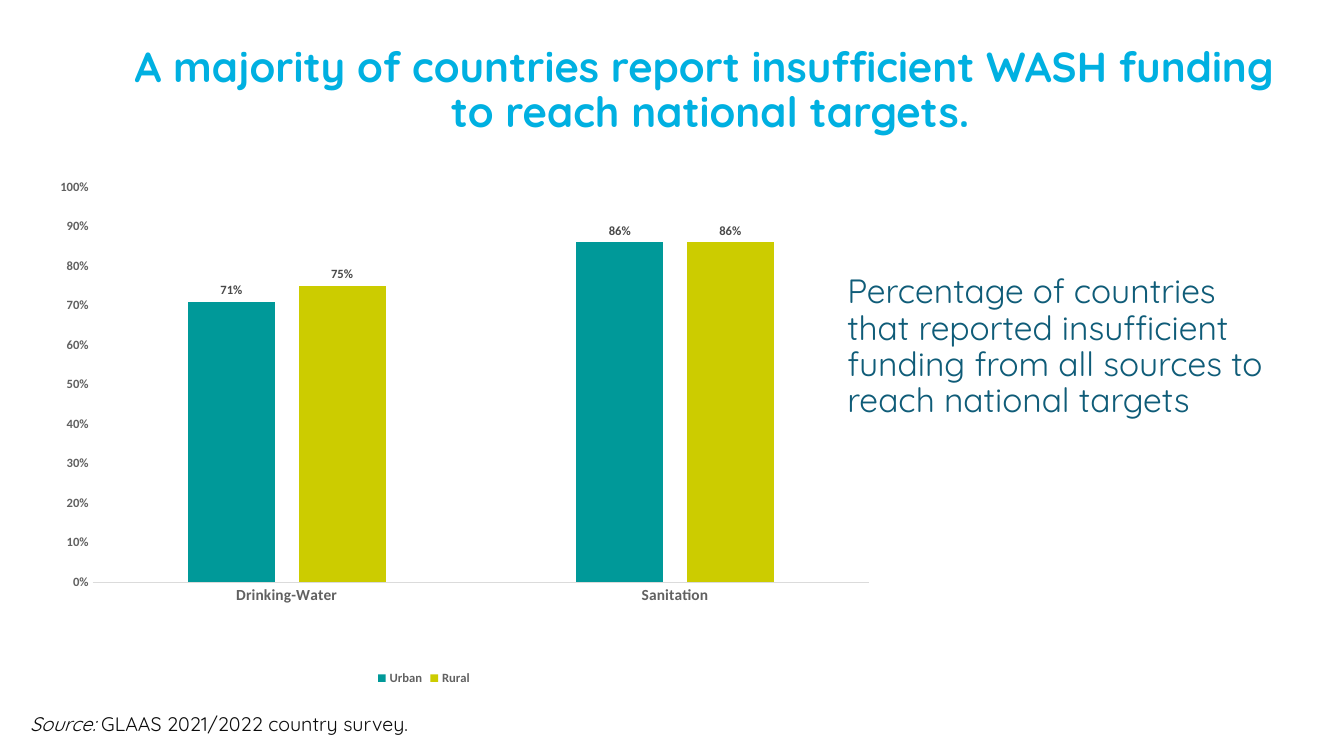
from lxml.etree import SubElement
from pptx import Presentation
from pptx.chart.data import CategoryChartData
from pptx.dml.color import RGBColor
from pptx.enum.chart import XL_CHART_TYPE as ChartType, XL_LEGEND_POSITION as LegendAt
from pptx.enum.chart import XL_LABEL_POSITION as LabelAt, XL_TICK_MARK as Tick
from pptx.enum.text import MSO_ANCHOR as Anchor, PP_ALIGN as Align
from pptx.oxml.ns import qn
from pptx.util import Inches, Pt

COLORS = {
    "title": "00B0E1", "message": "0F5C78", "ink": "0C0C0C",
    "axis": "616161", "baseline": "DBDBDB", "label": "494949",
    "Urban": "009999", "Rural": "CCCC00",
}
SHARES = {"Urban": (0.71, 0.86), "Rural": (0.75, 0.86)}

deck = Presentation()
deck.slide_width, deck.slide_height = Inches(13.33), Inches(7.5)
W, H = deck.slide_width, deck.slide_height
slide = deck.slides.add_slide(deck.slide_layouts[6])


def style(font, size, color, bold=False, italic=False, face="Calibri"):
    font.name, font.size = face, Pt(size)
    font.bold, font.italic = bold, italic
    font.color.rgb = RGBColor.from_string(COLORS[color])


def add_text(runs, x, y, w, h, size, color, bold=False, align=Align.LEFT,
             anchor=Anchor.MIDDLE, spacing=0.9):
    """Place (text, italic) runs in a box given in shares of the slide."""
    box = slide.shapes.add_textbox(int(W * x), int(H * y), int(W * w), int(H * h))
    frame = box.text_frame
    frame.word_wrap, frame.vertical_anchor = True, anchor
    paragraph = frame.paragraphs[0]
    paragraph.alignment, paragraph.line_spacing = align, spacing
    for index, (text, italic) in enumerate(runs):
        for part, line in enumerate(text.split("\n")):
            if part:
                paragraph.add_line_break()
            run = paragraph.add_run()
            run.text = line
            style(run.font, size, color, bold, italic, "Quicksand")


# Funding chart
shares = CategoryChartData(number_format="0%")
shares.categories = ["Drinking-Water", "Sanitation"]
for area, values in SHARES.items():
    shares.add_series(area, values)
chart = slide.shapes.add_chart(
    ChartType.COLUMN_CLUSTERED, Inches(-0.93), Inches(1.24),
    Inches(10.27), Inches(5.6), shares).chart
chart.has_title = False
style(chart.font, 10, "ink")

# Bars and their values
bars = chart.plots[0]
bars.gap_width, bars.overlap, bars.vary_by_categories = 219, -27, False
for series in bars.series:
    series.format.fill.solid()
    series.format.fill.fore_color.rgb = RGBColor.from_string(COLORS[series.name])
    labels = series.data_labels
    labels.show_value, labels.position = True, LabelAt.OUTSIDE_END
    labels.number_format, labels.number_format_is_linked = "0%", False
    style(labels.font, 9, "label", bold=True)

# Axes
for axis, size in ((chart.category_axis, 11), (chart.value_axis, 9)):
    axis.has_major_gridlines = False
    axis.major_tick_mark = axis.minor_tick_mark = Tick.NONE
    style(axis.tick_labels.font, size, "axis", bold=True)
baseline = chart.category_axis.format.line
baseline.width = Pt(0.75)
baseline.color.rgb = RGBColor.from_string(COLORS["baseline"])
percent = chart.value_axis
percent.minimum_scale, percent.maximum_scale, percent.major_unit = 0, 1, 0.1
percent.format.line.fill.background()
percent.tick_labels.number_format = "0%"
percent.tick_labels.number_format_is_linked = False

# Legend
chart.has_legend = True
chart.legend.position, chart.legend.include_in_layout = LegendAt.BOTTOM, False
style(chart.legend.font, 9, "axis", bold=True)

# Fixed inner plot area
plot_area = chart.element.find(".//" + qn("c:plotArea"))
for old in plot_area.findall(qn("c:layout")):
    plot_area.remove(old)
layout = SubElement(plot_area, qn("c:layout"))
plot_area.insert(0, layout)
manual = SubElement(layout, qn("c:manualLayout"))
for tag, value in (("layoutTarget", "inner"), ("xMode", "edge"), ("yMode", "edge"),
                   ("x", 0.18), ("y", 0.11), ("w", 0.75), ("h", 0.7)):
    SubElement(manual, qn("c:" + tag)).set("val", str(value))

# Title, message and source
add_text([("A majority of countries report insufficient WASH funding \n"
           "to reach national targets.", False)],
         0.035, 0.024, 0.987, 0.193, 30, "title", bold=True, align=Align.CENTER)
add_text([("Percentage of countries that reported insufficient funding "
           "from all sources to reach national targets", False)],
         0.623, 0.363, 0.33, 0.193, 24, "message")
add_text([("Source: ", True), ("GLAAS 2021/2022 country survey.", False)],
         0.015, 0.935, 0.73, 0.041, 14, "ink", anchor=Anchor.TOP, spacing=1.0)

deck.save("out.pptx")
